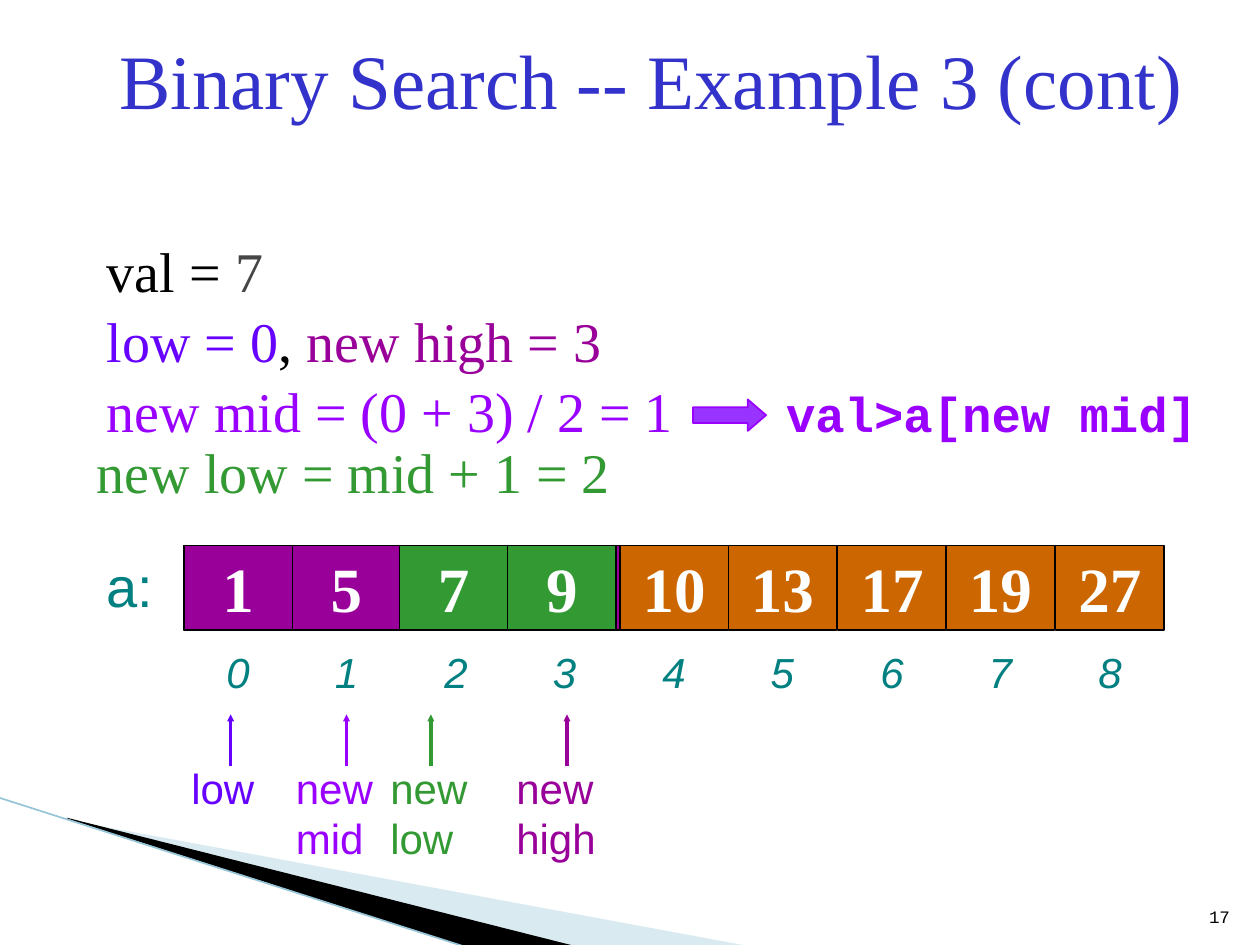
from lxml import etree
from pptx import Presentation
from pptx.dml.color import RGBColor
from pptx.enum.shapes import MSO_CONNECTOR, MSO_SHAPE
from pptx.enum.text import MSO_ANCHOR, PP_ALIGN
from pptx.oxml.ns import qn
from pptx.util import Pt

PX = 9144  # 100 px to the inch
STRAIGHT = MSO_CONNECTOR.STRAIGHT
RECTANGLE, RIGHT_ARROW = MSO_SHAPE.RECTANGLE, MSO_SHAPE.RIGHT_ARROW
MIDDLE, BOTTOM = MSO_ANCHOR.MIDDLE, MSO_ANCHOR.BOTTOM
LEFT, CENTER, RIGHT = PP_ALIGN.LEFT, PP_ALIGN.CENTER, PP_ALIGN.RIGHT

SERIF, SANS, MONO = "Times New Roman", "Arial", "Courier New"
BLACK = RGBColor(0x00, 0x00, 0x00)
WHITE = RGBColor(0xFF, 0xFF, 0xFF)
GRAY = RGBColor(0x46, 0x46, 0x46)
TITLE_BLUE = RGBColor(0x33, 0x33, 0xCC)
LOW_BLUE = RGBColor(0x66, 0x00, 0xFF)
HIGH_PURPLE = RGBColor(0x99, 0x00, 0x99)
MID_VIOLET = RGBColor(0x99, 0x00, 0xFF)
ARROW_VIOLET = RGBColor(0x99, 0x33, 0xFF)
NEW_LOW_GREEN = RGBColor(0x33, 0x99, 0x33)
ORANGE = RGBColor(0xCC, 0x66, 0x00)
TEAL = RGBColor(0x00, 0x80, 0x80)
PALE_BLUE = RGBColor(0xA0, 0xCB, 0xDC)
EDGE_BLUE = RGBColor(0x97, 0xC5, 0xD8)

prs = Presentation()
prs.slide_width, prs.slide_height = 1000 * PX, 750 * PX
slide = prs.slides.add_slide(prs.slide_layouts[5])
shapes = slide.shapes


def write(shape, text, size, face, color, align=LEFT, bold=False, italic=False):
    """Fill the shape with one paragraph and return its text frame."""
    frame = shape.text_frame
    frame.word_wrap = True
    paragraph = frame.paragraphs[0]
    paragraph.text = text
    paragraph.alignment = align
    font = paragraph.font
    font.size, font.name, font.color.rgb = Pt(size), face, color
    font.bold, font.italic = bold, italic
    return frame


def add_line(x1, y1, x2, y2, color, width):
    line = shapes.add_connector(STRAIGHT, x1 * PX, y1 * PX, x2 * PX, y2 * PX)
    line.line.color.rgb, line.line.width = color, Pt(width)
    etree.SubElement(line._element.spPr, qn("a:effectLst"))
    return line


# Corner decoration
for color, alpha, points in [
    (PALE_BLUE, 40, [(55, 651), (595, 751), (456, 751), (55, 650)]),
    (BLACK, 100, [(53, 649), (457, 751), (372, 752), (54, 650)]),
]:
    builder = shapes.build_freeform(*points[0], scale=PX)
    builder.add_line_segments(points[1:])
    wedge = builder.convert_to_shape()
    wedge.shadow.inherit = False
    wedge.fill.solid()
    wedge.fill.fore_color.rgb = color
    wedge.line.fill.background()
    if alpha < 100:
        fill_color = wedge._element.spPr.find(".//" + qn("a:srgbClr"))
        etree.SubElement(fill_color, qn("a:alpha"), val=str(alpha * 1000))
add_line(-1, 633, 371, 752, EDGE_BLUE, 0.95)

# Slide number and title
number = shapes.add_textbox(946 * PX, 701 * PX, 40 * PX, 40 * PX)
write(number, "17", 10, MONO, BLACK, RIGHT).vertical_anchor = BOTTOM

title = shapes.title
title.left, title.top, title.width, title.height = 67 * PX, 25 * PX, 900 * PX, 75 * PX
write(title, "Binary Search -- Example 3 (cont)", 44, SERIF, TITLE_BLUE,
      CENTER).vertical_anchor = MIDDLE

# Search state
state = shapes.add_textbox(75 * PX, 183 * PX, 925 * PX, 170 * PX).text_frame
state.word_wrap = True
steps = [
    [("val = ", BLACK), ("7", GRAY)],
    [("low = 0", LOW_BLUE), (", ", BLACK), ("new high = 3", HIGH_PURPLE)],
    [("new mid = (0 + 3) / 2 = 1", MID_VIOLET), ("\tval>a[new mid]", MID_VIOLET)],
]
for row, step in enumerate(steps):
    paragraph = state.paragraphs[0] if row == 0 else state.add_paragraph()
    if row == 2:
        tabs = etree.SubElement(paragraph._p.get_or_add_pPr(), qn("a:tabLst"))
        etree.SubElement(tabs, qn("a:tab"), pos=str(539 * PX), algn="l")
    if row > 0:
        paragraph.space_before = Pt(1.5)
    paragraph.font.size, paragraph.font.name = Pt(32), SERIF
    for text, color in step:
        run = paragraph.add_run()
        run.text = text
        run.font.color.rgb = color
comparison = run.font
comparison.size, comparison.name, comparison.bold = Pt(28), MONO, True

implies = shapes.add_shape(RIGHT_ARROW, 550 * PX, 317 * PX, 58 * PX, 25 * PX)
implies.adjustments[1] = 0.58
implies.shadow.inherit = False
implies.fill.solid()
implies.fill.fore_color.rgb = ARROW_VIOLET
implies.line.color.rgb, implies.line.width = MID_VIOLET, Pt(1)

new_low = shapes.add_textbox(67 * PX, 342 * PX, 433 * PX, 63 * PX)
write(new_low, "new low = mid + 1 = 2", 32, SERIF, NEW_LOW_GREEN)

# Array: the purple lower half lies behind the remaining green range
array_label = shapes.add_textbox(75 * PX, 433 * PX, 67 * PX, 63 * PX)
write(array_label, "a:", 32, SANS, TEAL)

values = [1, 5, 7, 9, 10, 13, 17, 19, 27]
lefts = [146 + index * 173 // 2 for index in range(len(values))]
cells = [(lefts[0], 346, "", HIGH_PURPLE)]
for index, (left, value) in enumerate(zip(lefts, values)):
    if index in (2, 3):
        cells.append((left - 2, 86, str(value), NEW_LOW_GREEN))
    else:
        cells.append((left, 86, str(value), HIGH_PURPLE if index < 2 else ORANGE))
    index_label = shapes.add_textbox(left * PX, 500 * PX, 86 * PX, 67 * PX)
    write(index_label, str(index), 24, SANS, TEAL, CENTER,
          italic=True).vertical_anchor = MIDDLE

for left, width, value, color in cells:
    cell = shapes.add_shape(RECTANGLE, left * PX, 433 * PX, width * PX, 67 * PX)
    cell.shadow.inherit = False
    cell.fill.solid()
    cell.fill.fore_color.rgb = color
    cell.line.color.rgb, cell.line.width = BLACK, Pt(0.75)
    if value:
        frame = write(cell, value, 36, SERIF, WHITE, CENTER, bold=True)
        frame.word_wrap = False
        frame.vertical_anchor = MIDDLE

# Index pointers
for text, left, width, height, arrow_x, color in [
    ("low", 142, 100, 50, 183, LOW_BLUE),
    ("new high", 400, 117, 90, 450, HIGH_PURPLE),
    ("new mid", 225, 117, 90, 275, MID_VIOLET),
    ("new low", 300, 117, 90, 342, NEW_LOW_GREEN),
]:
    pointer = shapes.add_textbox(left * PX, 600 * PX, width * PX, height * PX)
    write(pointer, text, 24, SANS, color)
    arrow = add_line(arrow_x, 608, arrow_x, 567, color, 2)
    etree.SubElement(arrow.line._get_or_add_ln(), qn("a:tailEnd"),
                     type="triangle", w="sm", len="sm")

prs.save("out.pptx")
